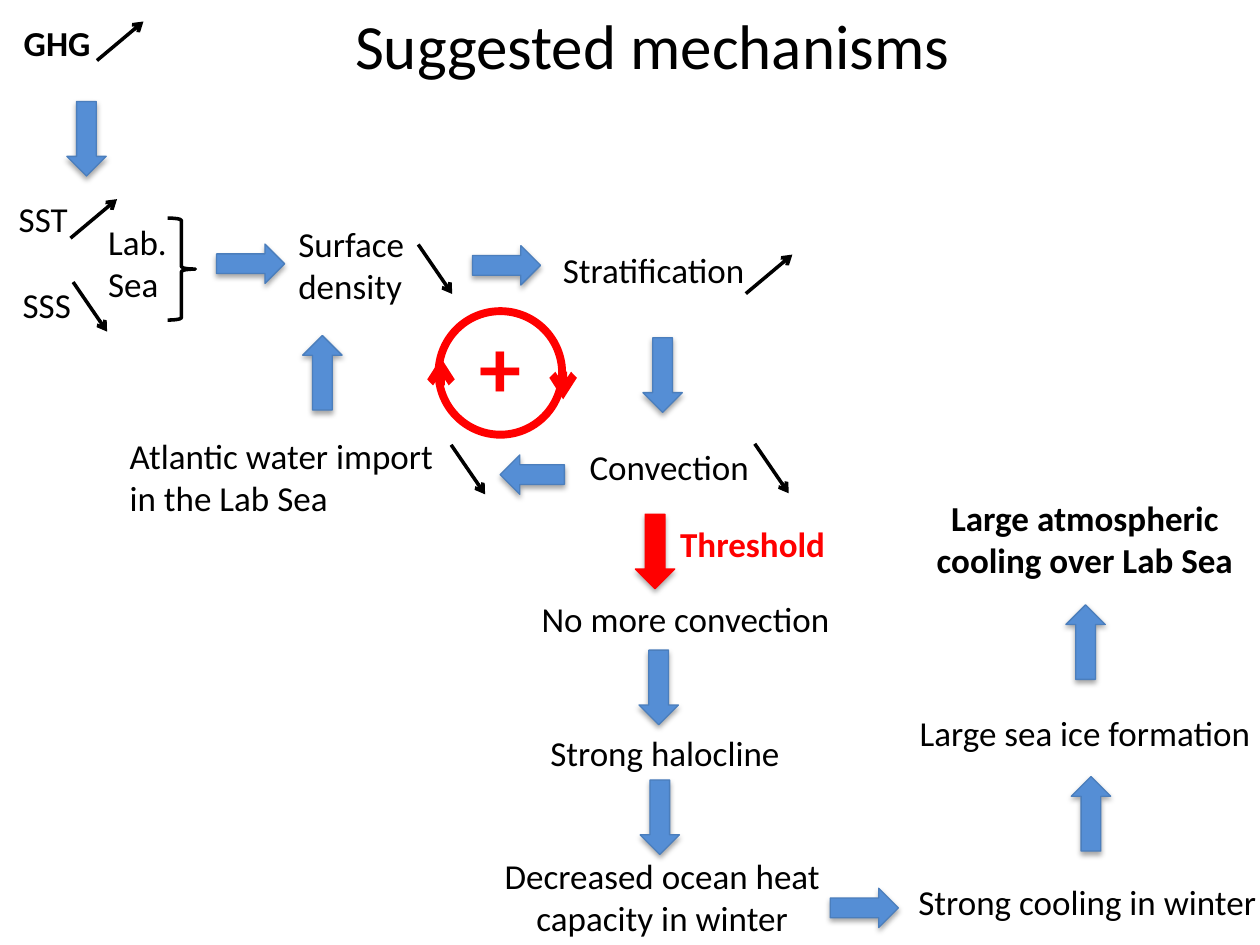
from pptx import Presentation
from pptx.dml.color import RGBColor
from pptx.enum.shapes import MSO_CONNECTOR, MSO_SHAPE
from pptx.enum.text import PP_ALIGN
from pptx.oxml import parse_xml
from pptx.oxml.ns import nsdecls
from pptx.util import Pt

LINE = MSO_CONNECTOR.STRAIGHT
DOWN, UP = MSO_SHAPE.DOWN_ARROW, MSO_SHAPE.UP_ARROW
RIGHT, LEFT = MSO_SHAPE.RIGHT_ARROW, MSO_SHAPE.LEFT_ARROW
OVAL, BRACE = MSO_SHAPE.OVAL, MSO_SHAPE.RIGHT_BRACE
ALIGN_LEFT, CENTER = PP_ALIGN.LEFT, PP_ALIGN.CENTER

FONT = "Calibri"
BLACK, RED, BLUE, EDGE = "000000", "FF0000", "558ED5", "4B7EBC"
RISE, FALL = (26.6, -22.3), (19.4, 28.3)  # trend arrow directions
ONE_LINE, TWO_LINES = 31.5, 55.7  # label heights


def rgb(value):
    return RGBColor.from_string(value)


def add_label(s, text, x, y, w, h=ONE_LINE, size=20, color=BLACK,
              bold=False, align=ALIGN_LEFT):
    tf = s.shapes.add_textbox(Pt(x), Pt(y), Pt(w), Pt(h)).text_frame
    tf.word_wrap = True
    tf.text = text
    for p in tf.paragraphs:
        p.alignment = align
        p.font.name = FONT
        p.font.size = Pt(size)
        p.font.bold = bold
        p.font.color.rgb = rgb(color)


def add_block_arrow(s, kind, x, y, fill=BLUE, edge=EDGE, length=None):
    if kind in (DOWN, UP):
        w, h = 22.5, length or 42.6
    else:
        w, h = length or 38.9, 22.5
    sp = s.shapes.add_shape(kind, Pt(x), Pt(y), Pt(w), Pt(h))
    sp.fill.solid()
    sp.fill.fore_color.rgb = rgb(fill)
    sp.line.color.rgb = rgb(edge)
    sp.line.width = Pt(0.75)
    # Soft shadow straight below
    sp._element.spPr.append(parse_xml(
        f'<a:effectLst {nsdecls("a")}>'
        f'<a:outerShdw blurRad="{Pt(3.1)}" dist="{Pt(1.8)}" dir="5400000" rotWithShape="0">'
        '<a:srgbClr val="000000"><a:alpha val="35000"/></a:srgbClr>'
        '</a:outerShdw></a:effectLst>'))


def add_line_arrow(s, x, y, direction, color=BLACK, width=2):
    dx, dy = direction
    line = s.shapes.add_connector(LINE, Pt(x), Pt(y), Pt(x + dx), Pt(y + dy))
    line.line.color.rgb = rgb(color)
    line.line.width = Pt(width)
    line.line._get_or_add_ln().append(
        parse_xml(f'<a:tailEnd {nsdecls("a")} type="arrow"/>'))
    line._element.spPr.append(parse_xml(f'<a:effectLst {nsdecls("a")}/>'))


def add_outline(s, kind, x, y, w, h, color, width):
    sp = s.shapes.add_shape(kind, Pt(x), Pt(y), Pt(w), Pt(h))
    sp.shadow.inherit = False
    sp.fill.background()
    sp.line.color.rgb = rgb(color)
    sp.line.width = Pt(width)


def add_feedback_loop(s):
    add_outline(s, OVAL, 250.6, 177.8, 70.6, 70.6, RED, 4.5)
    add_line_arrow(s, 252, 218.2, (0, -13.7), RED, 4.5)
    add_line_arrow(s, 321.8, 216, (0, 12.2), RED, 4.5)
    add_label(s, "+", 267.1, 176.4, 75.6, 65.5, size=48, color=RED, bold=True)


def main():
    prs = Presentation()
    prs.slide_width, prs.slide_height = Pt(720), Pt(540)
    s = prs.slides.add_slide(prs.slide_layouts[6])

    add_label(s, "Suggested mechanisms", 195.8, 0, 396.7, 51.1, size=36)

    # Steps of the mechanism
    add_label(s, "GHG", 6.5, 8.6, 62.6, bold=True)
    add_label(s, "SST", 3.6, 109.4, 63.4)
    add_label(s, "SSS", 5.8, 158.7, 63.4)
    add_label(s, "Lab. Sea", 54.7, 122.4, 57.6, TWO_LINES)
    add_label(s, "Surface\ndensity", 163.4, 123.8, 104.4, TWO_LINES)
    add_label(s, "Stratification", 314.6, 138.5, 131.8)
    add_label(s, "Convection", 329.8, 251.3, 110.2)
    add_label(s, "Atlantic water import in the Lab Sea", 67, 244.8, 195.8, TWO_LINES)
    add_label(s, "Threshold", 381.6, 295.2, 103.7, color=RED, bold=True)
    add_label(s, "No more convection", 302.4, 337.7, 182.9)
    add_label(s, "Strong halocline", 307.4, 414.7, 182.9)
    add_label(s, "Decreased ocean heat capacity in winter", 257.8, 484.5, 241.2,
              TWO_LINES, align=CENTER)
    add_label(s, "Strong cooling in winter", 517.7, 499.7, 211)
    add_label(s, "Large sea ice formation", 518.4, 403.2, 211)
    add_label(s, "Large atmospheric cooling over Lab Sea", 518.4, 280.1, 203,
              TWO_LINES, bold=True, align=CENTER)

    # Block arrows between steps
    for kind, x, y in [
        (DOWN, 38.2, 58), (RIGHT, 123.8, 139.5), (RIGHT, 270, 140.4),
        (DOWN, 367.4, 193), (UP, 173, 191.7), (DOWN, 365.2, 371.5),
        (DOWN, 365.8, 445.7), (RIGHT, 474.5, 507.6),
        (UP, 612.2, 443.7), (UP, 609.1, 345.6),
    ]:
        add_block_arrow(s, kind, x, y)
    add_block_arrow(s, LEFT, 285.8, 260, length=36.7)
    add_block_arrow(s, DOWN, 363.1, 293.8, fill=RED, edge=RED)

    # Trend arrows beside the labels
    for x, y in [(55.4, 34.6), (40.3, 136.1), (426.2, 167.8)]:
        add_line_arrow(s, x, y, RISE)
    for x, y in [(41.8, 161.2), (239, 139.7), (431.3, 253.6), (257.8, 254.2)]:
        add_line_arrow(s, x, y, FALL)

    add_outline(s, BRACE, 95.8, 124.6, 15.8, 58.3, BLACK, 2)
    add_feedback_loop(s)

    prs.save("out.pptx")


if __name__ == "__main__":
    main()
